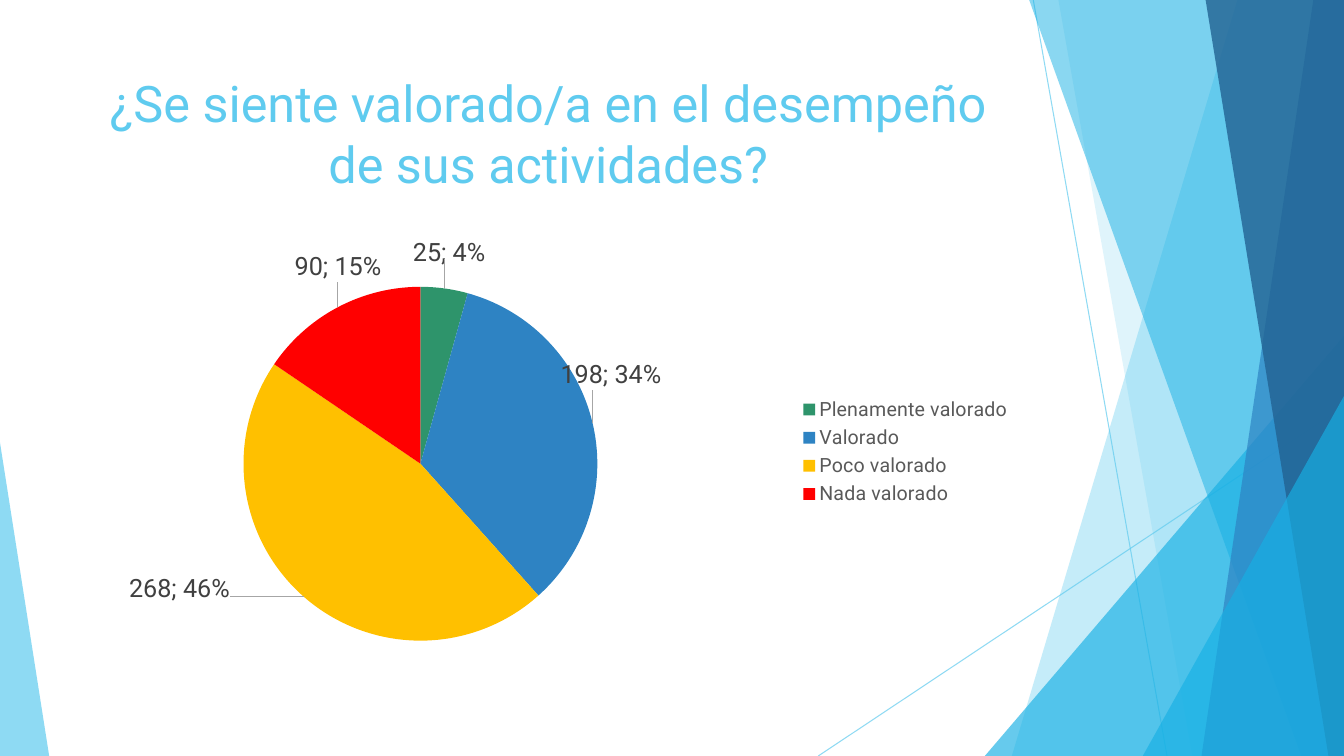
"""Build the survey slide: a pie chart of how valued staff feel, beside blue facets."""
import pptx
import pptx.chart.data
import pptx.dml.color
import pptx.enum.chart
import pptx.enum.shapes
import pptx.enum.text
import pptx.oxml
import pptx.oxml.ns
import pptx.util

Cm, Pt = pptx.util.Cm, pptx.util.Pt
RGBColor = pptx.dml.color.RGBColor
qn = pptx.oxml.ns.qn

SKY = RGBColor(0x5F, 0xCB, 0xEF)
CYAN = RGBColor(0x17, 0xB0, 0xE4)
BLUE = RGBColor(0x2E, 0x83, 0xC3)
NAVY = RGBColor(0x22, 0x62, 0x92)
GREEN = RGBColor(0x2E, 0x94, 0x6B)
AMBER = RGBColor(0xFF, 0xC0, 0x00)
RED = RGBColor(0xFF, 0x00, 0x00)
DARK = RGBColor(0x40, 0x40, 0x40)
GREY = RGBColor(0x59, 0x59, 0x59)

FONT = "Roboto"
W, H = 33.87, 19.05
FACET_TOP = -0.02
BODY_LEFT, BODY_WIDTH = 1.88, 23.88

TITLE = "¿Se siente valorado/a en el desempeño de sus actividades?"
# category, answers, colour, label offset as a share of the chart
ANSWERS = [
    ("Plenamente valorado", 25, GREEN, (-0.034, -0.055)),
    ("Valorado", 198, BLUE, (-0.04, -0.075)),
    ("Poco valorado", 268, AMBER, (-0.074, -0.064)),
    ("Nada valorado", 90, RED, (0.049, -0.047)),
]
PIE_AREA = {"x": 0.178, "y": 0.114, "w": 0.374, "h": 0.828}

RAYS = [((26.04, 0), (29.41, H)), ((W, 10.24), (20.62, H))]
FACETS = [
    ("band", (31.19, 25.5), SKY, 36),
    ("band", (26.67, 30.05), SKY, 20),
    ("triangle", (24.82, 8.46, W, 1), CYAN, 66),
    ("band", (25.93, 32.79), CYAN, 50),
    ("band", (33.1, 30.28), BLUE, 70),
    ("band", (30.38, 33.48), NAVY, 80),
    ("triangle", (28.8, 9.98, W, 1), CYAN, 66),
    ("triangle", (0, 11.15, 1.24, 0), SKY, 70),
]


def set_alpha(element, percent):
    clr = element.xpath(".//a:srgbClr")[0]
    clr.append(pptx.oxml.parse_xml(
        f'<a:alpha {pptx.oxml.ns.nsdecls("a")} val="{percent * 1000}"/>'))


def add_ray(shapes, start, end):
    s = shapes.add_connector(pptx.enum.shapes.MSO_CONNECTOR.STRAIGHT,
                             *(Cm(v) for v in start + end))
    s.line.color.rgb = SKY
    s.line.width = Pt(0.75)
    sp = s._element.spPr
    set_alpha(sp, 70)
    sp.append(pptx.oxml.parse_xml(f'<a:effectLst {pptx.oxml.ns.nsdecls("a")}/>'))


def add_facet(shapes, kind, geometry, color, alpha):
    if kind == "band":
        top_x, bottom_x = geometry
        fb = shapes.build_freeform(Cm(top_x), Cm(FACET_TOP))
        fb.add_line_segments([(Cm(x), Cm(y)) for x, y in
                              [(W, FACET_TOP), (W, H), (bottom_x, H)]])
        s = fb.convert_to_shape()
    else:
        left, top, right, apex = geometry
        s = shapes.add_shape(pptx.enum.shapes.MSO_SHAPE.ISOSCELES_TRIANGLE,
                             Cm(left), Cm(top), Cm(right - left), Cm(H - top))
        s.adjustments[0] = apex
    s.shadow.inherit = False
    s.fill.solid()
    s.fill.fore_color.rgb = color
    s.line.fill.background()
    set_alpha(s._element.spPr, alpha)


def set_font(font, size, color):
    font.name, font.size, font.color.rgb = FONT, Pt(size), color


def add_title(shapes):
    s = shapes.add_textbox(Cm(BODY_LEFT), Cm(1.7), Cm(BODY_WIDTH), Cm(3.66))
    tf = s.text_frame
    tf.word_wrap = True
    tf.vertical_anchor = pptx.enum.text.MSO_ANCHOR.TOP
    p = tf.paragraphs[0]
    p.alignment = pptx.enum.text.PP_ALIGN.CENTER
    r = p.add_run()
    r.text = TITLE
    set_font(r.font, 36, SKY)


def layout_xml(values, inner=False):
    modes = '<c:layoutTarget val="inner"/><c:xMode val="edge"/><c:yMode val="edge"/>'
    parts = "".join(f'<c:{k} val="{v}"/>' for k, v in values.items())
    return pptx.oxml.parse_xml(
        f'<c:layout {pptx.oxml.ns.nsdecls("c")}><c:manualLayout>'
        f'{modes if inner else ""}{parts}</c:manualLayout></c:layout>')


def add_pie(shapes):
    data = pptx.chart.data.CategoryChartData()
    data.categories = [answer[0] for answer in ANSWERS]
    data.add_series("Series 1", [answer[1] for answer in ANSWERS])
    chart = shapes.add_chart(pptx.enum.chart.XL_CHART_TYPE.PIE, Cm(BODY_LEFT), Cm(6),
                             Cm(BODY_WIDTH), Cm(10.77), data).chart
    chart.has_title = False
    chart.font.name, chart.font.size = FONT, Pt(18)
    chart.has_legend = True
    chart.legend.position = pptx.enum.chart.XL_LEGEND_POSITION.RIGHT
    chart.legend.include_in_layout = False
    set_font(chart.legend.font, 14, GREY)

    plot_area = chart._chartSpace.chart.plotArea
    for old in plot_area.findall(qn("c:layout")):
        plot_area.remove(old)
    plot_area.insert(0, layout_xml(PIE_AREA, inner=True))

    outside = pptx.enum.chart.XL_LABEL_POSITION.OUTSIDE_END
    series = chart.plots[0].series[0]
    labels = series.data_labels
    labels.show_value = labels.show_percentage = True
    labels.position = outside
    set_font(labels.font, 18, DARK)
    for i, (_, _, color, _) in enumerate(ANSWERS):
        point = series.points[i]
        point.format.fill.solid()
        point.format.fill.fore_color.rgb = color
        point.format.line.fill.background()
        point.data_label.position = outside
        set_font(point.data_label.font, 18, DARK)

    for lbl, answer in zip(series._element.xpath("c:dLbls/c:dLbl"), ANSWERS):
        lbl.find(qn("c:idx")).addnext(layout_xml(dict(zip("xy", answer[3]))))
        lbl.find(qn("c:showPercent")).set("val", "1")
        lbl.append(pptx.oxml.parse_xml(
            f'<c:separator {pptx.oxml.ns.nsdecls("c")}>; </c:separator>'))
    dlbls = series._element.xpath("c:dLbls")[0]
    for old in dlbls.findall(qn("c:showLeaderLines")):
        dlbls.remove(old)
    ns = pptx.oxml.ns.nsdecls("c", "a")
    for xml in (f'<c:showLeaderLines {ns} val="1"/>',
                f'<c:leaderLines {ns}><c:spPr><a:ln w="9525"><a:solidFill>'
                '<a:srgbClr val="A6A6A6"/></a:solidFill></a:ln></c:spPr></c:leaderLines>'):
        dlbls.append(pptx.oxml.parse_xml(xml))


def main():
    prs = pptx.Presentation()
    prs.slide_width, prs.slide_height = Cm(W), Cm(H)
    shapes = prs.slides.add_slide(prs.slide_layouts[6]).shapes
    for ray in RAYS:
        add_ray(shapes, *ray)
    for facet in FACETS:
        add_facet(shapes, *facet)
    add_title(shapes)
    add_pie(shapes)
    prs.save("out.pptx")


if __name__ == "__main__":
    main()
